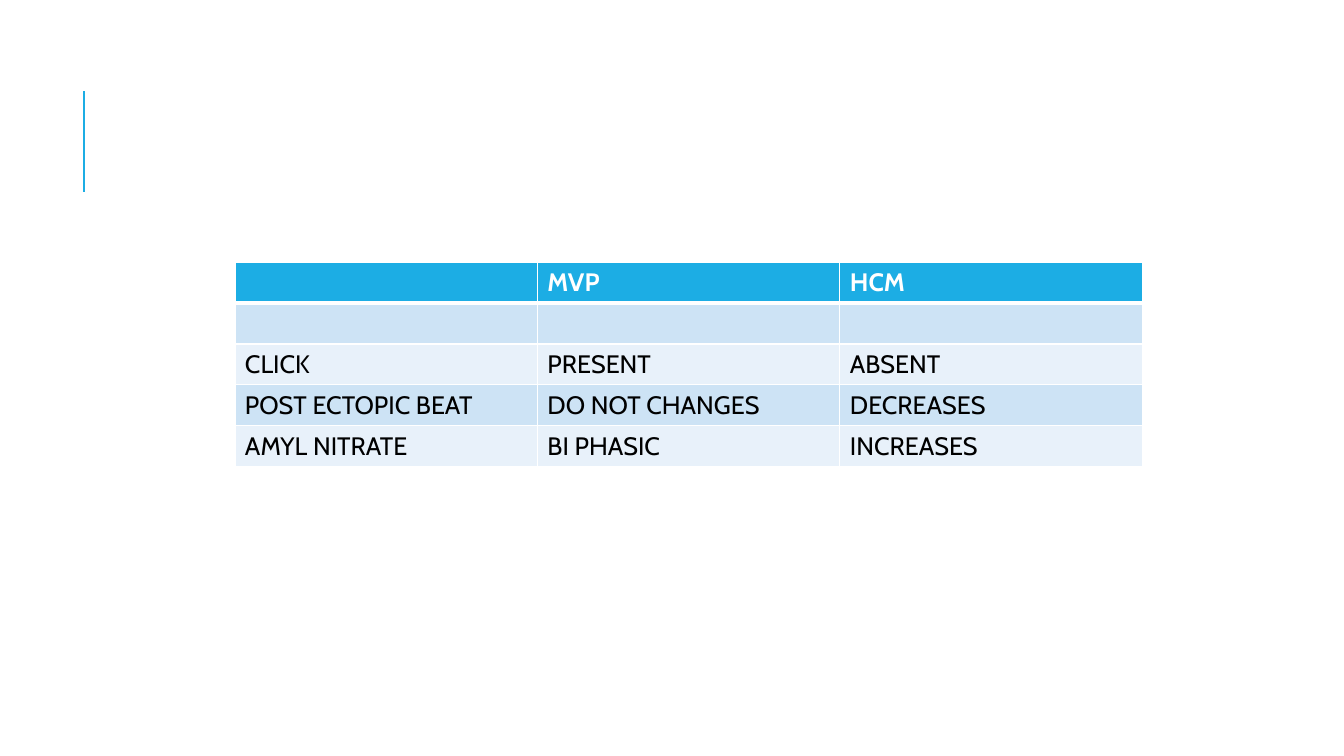
from dataclasses import dataclass

from lxml.etree import SubElement
from pptx import Presentation
from pptx.dml.color import RGBColor as RGB
from pptx.enum.shapes import MSO_CONNECTOR as Connector
from pptx.oxml.ns import qn
from pptx.slide import Slide
from pptx.table import _Cell as Cell
from pptx.util import Inches, Pt

COLORS = {
    "accent": "1CADE4",
    "band": "CDE3F5",
    "pale": "E8F1FA",
    "white": "FFFFFF",
    "black": "000000",
}
FONT = "Cabin"
COL_W, ROW_H = 3, 0.406
TABLE_LEFT, TABLE_TOP = 2.33, 2.6
THIN, THICK = 1, 3


@dataclass(frozen=True)
class RowStyle:
    fill: str
    text: str = "black"
    bold: bool = False
    top: float = THIN
    bottom: float = THIN


@dataclass(frozen=True)
class Row:
    texts: tuple[str, str, str]
    style: RowStyle


HEADER = RowStyle("accent", "white", True, bottom=THICK)
UNDER_HEADER = RowStyle("band", top=THICK)
BAND = RowStyle("band")
PALE = RowStyle("pale")

ROWS = [
    Row(("", "MVP", "HCM"), HEADER),
    Row(("", "", ""), UNDER_HEADER),
    Row(("CLICK", "PRESENT", "ABSENT"), PALE),
    Row(("POST ECTOPIC BEAT", "DO NOT CHANGES", "DECREASES"), BAND),
    Row(("AMYL NITRATE", "BI PHASIC", "INCREASES"), PALE),
]


def color(name: str) -> RGB:
    return RGB.from_string(COLORS[name])


def add_borders(cell: Cell, style: RowStyle) -> None:
    """Draw white cell borders; must run before the fill is set."""
    widths = {"lnL": THIN, "lnR": THIN, "lnT": style.top, "lnB": style.bottom}
    tc_pr = cell._tc.get_or_add_tcPr()
    for side, width in widths.items():
        ln = SubElement(tc_pr, qn(f"a:{side}"), w=str(Pt(width)))
        fill = SubElement(ln, qn("a:solidFill"))
        SubElement(fill, qn("a:srgbClr"), val=COLORS["white"])


def fill_cell(cell: Cell, text: str, style: RowStyle) -> None:
    add_borders(cell, style)
    cell.fill.solid()
    cell.fill.fore_color.rgb = color(style.fill)
    cell.text = text
    font = cell.text_frame.paragraphs[0].font
    font.name, font.size, font.bold = FONT, Pt(18), style.bold
    font.color.rgb = color(style.text)


def add_findings_table(s: Slide) -> None:
    n_rows, n_cols = len(ROWS), len(ROWS[0].texts)
    table = s.shapes.add_table(
        n_rows, n_cols, Inches(TABLE_LEFT), Inches(TABLE_TOP),
        Inches(n_cols * COL_W), Inches(n_rows * ROW_H),
    ).table
    for i, row in enumerate(ROWS):
        for j, text in enumerate(row.texts):
            fill_cell(table.cell(i, j), text, row.style)


def add_title_rule(s: Slide) -> None:
    x = Inches(0.83)
    rule = s.shapes.add_connector(Connector.STRAIGHT, x, Inches(1.9), x, Inches(0.9))
    rule.line.color.rgb = color("accent")
    rule.line.width = Pt(1.5)
    SubElement(rule._element.spPr, qn("a:effectLst"))


def main() -> None:
    prs = Presentation()
    prs.slide_width, prs.slide_height = Inches(13.33), Inches(7.5)
    s = prs.slides.add_slide(prs.slide_layouts[6])
    add_title_rule(s)
    add_findings_table(s)
    prs.save("out.pptx")


if __name__ == "__main__":
    main()
